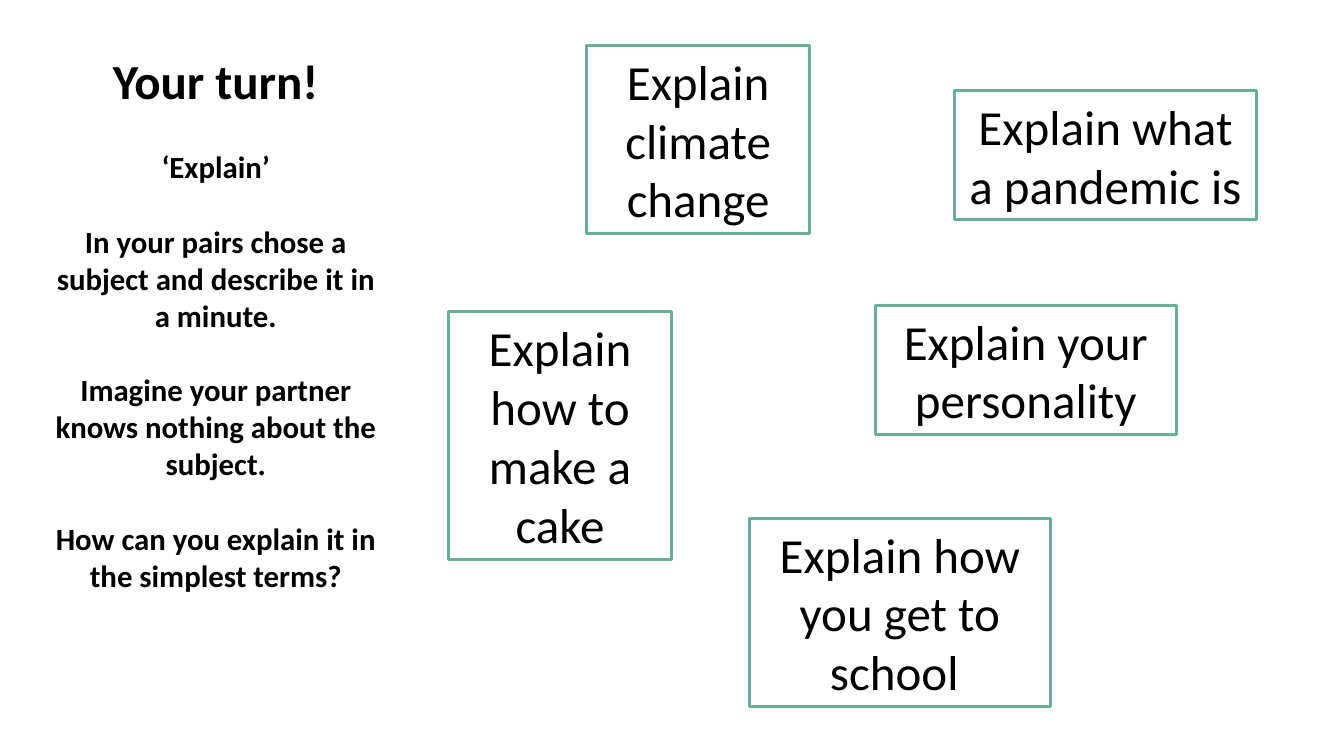
from pptx import Presentation
from pptx.dml.color import RGBColor
from pptx.enum.shapes import MSO_SHAPE
from pptx.enum.text import MSO_ANCHOR, MSO_AUTO_SIZE, PP_ALIGN
from pptx.oxml.ns import qn
from pptx.util import Inches, Pt
from lxml.etree import SubElement

BLACK = RGBColor(0x00, 0x00, 0x00)
GREEN = RGBColor(0x67, 0xAE, 0x9B)
FONT = "Calibri"
BIG, SMALL, GAP = 35, 22, 26.8

# Content
TITLE = "Your turn!"
STEPS = [
    "‘Explain’",
    "In your pairs chose a subject and describe it in a minute.",
    "Imagine your partner knows nothing about the subject.",
    "How can you explain it in the simplest terms?",
]
NARROW, WIDE = 2.21, 2.99
# Text, left, top, width, lines of text
TOPICS = [
    ("Explain climate change", 5.82, 0.45, NARROW, 3),
    ("Explain how to make a cake", 4.45, 3.09, NARROW, 4),
    ("Explain what a pandemic is", 9.47, 0.9, WIDE, 2),
    ("Explain your personality", 8.68, 3.03, WIDE, 2),
    ("Explain how you get to school ", 7.43, 5.14, WIDE, 3),
]
LINE, PAD = 0.59, 0.1


def place(shape, left, top, width, height):
    shape.left, shape.top = Inches(left), Inches(top)
    shape.width, shape.height = Inches(width), Inches(height)


def fill_text(shape, lines, size, bold, anchor):
    frame = shape.text_frame
    frame.word_wrap = True
    frame.auto_size = MSO_AUTO_SIZE.NONE
    frame.vertical_anchor = anchor
    for i, line in enumerate(lines):
        para = frame.paragraphs[0] if i == 0 else frame.add_paragraph()
        para.text = line
        para.alignment = PP_ALIGN.CENTER
        para.space_before = Pt(GAP if i else 0)
        props = para._p.get_or_add_pPr()
        props.set("marL", "0")
        props.set("indent", "0")
        SubElement(props, qn("a:buNone"))
        font = para.font
        font.name, font.size, font.bold = FONT, Pt(size), bold
        font.color.rgb = BLACK


deck = Presentation()
deck.slide_width, deck.slide_height = Inches(13.33), Inches(7.5)
slide = deck.slides.add_slide(deck.slide_layouts[1])

# Title and instructions
title, body = slide.placeholders
place(title, 0.41, 0.45, 3.46, 0.69)
fill_text(title, [TITLE], BIG, True, MSO_ANCHOR.TOP)
place(body, 0.41, 1.42, 3.46, 4.9)
fill_text(body, STEPS, SMALL, True, MSO_ANCHOR.TOP)

# Topic boxes
for text, left, top, width, rows in TOPICS:
    box = slide.shapes.add_shape(MSO_SHAPE.RECTANGLE, 0, 0, 0, 0)
    place(box, left, top, width, rows * LINE + PAD)
    box.shadow.inherit = False
    box.fill.background()
    box.line.color.rgb = GREEN
    box.line.width = Pt(2.25)
    fill_text(box, [text], BIG, False, MSO_ANCHOR.MIDDLE)

deck.save("out.pptx")
